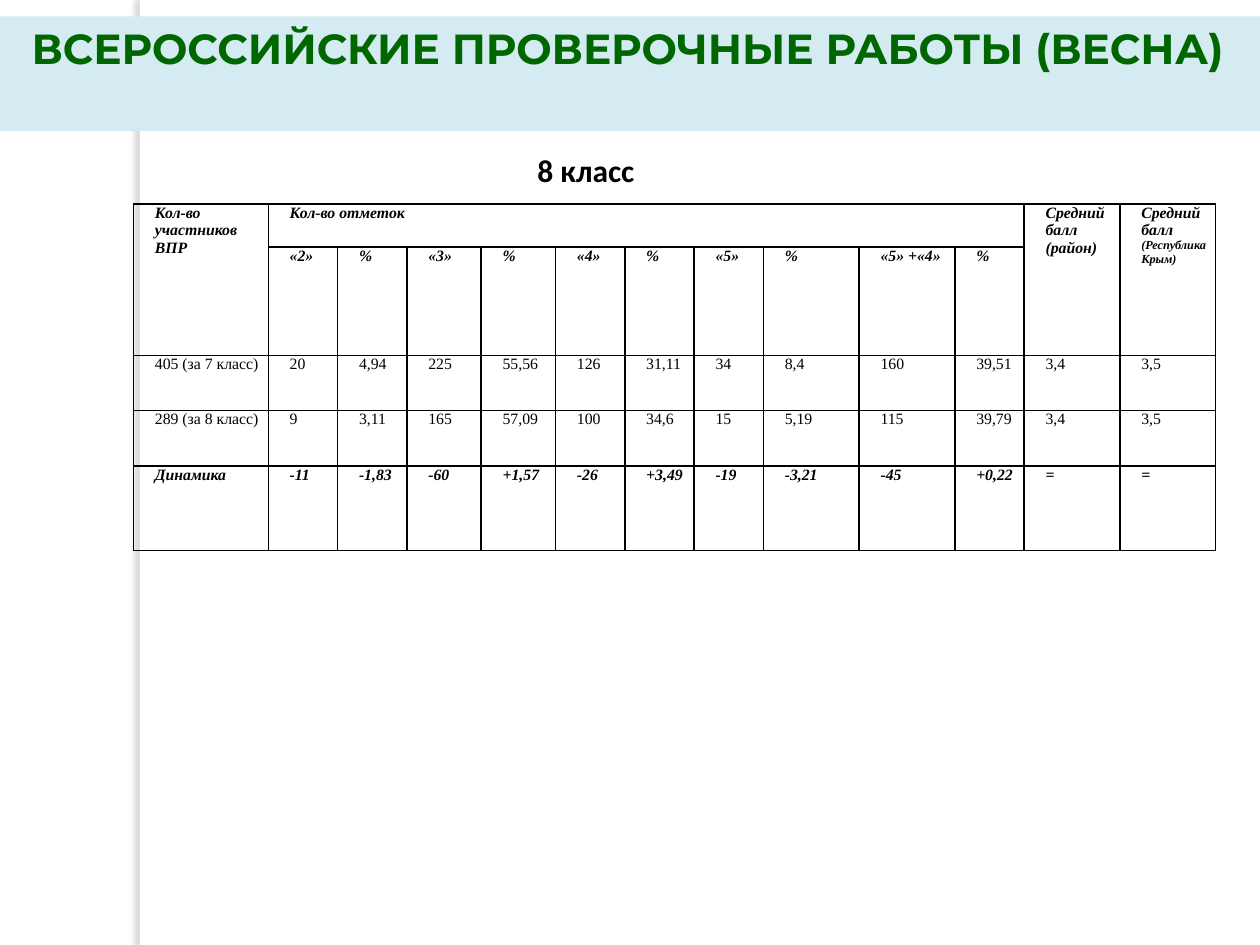
import pptx
import pptx.dml.color
import pptx.enum.shapes
import pptx.enum.text
import pptx.oxml
import pptx.util
from pptx.util import Inches

COLORS = {
    "background": "FFFFFF",
    "band": "D4EBF1",
    "title": "006600",
    "text": "000000",
    "border": "000000",
    "shadow": "736F63",
}
ALIGN = pptx.enum.text.PP_ALIGN
NS = 'xmlns:a="http://schemas.openxmlformats.org/drawingml/2006/main"'

COLUMN_WIDTHS = [1.07, 0.55, 0.55, 0.59, 0.59, 0.55, 0.55, 0.55,
                 0.76, 0.76, 0.55, 0.76, 0.76]
ROW_HEIGHTS = [0.34, 0.86, 0.44, 0.44, 0.67]
MARKS = ["«2»", "%", "«3»", "%", "«4»", "%", "«5»", "%", "«5» +«4»", "%"]
RESULTS = [
    ["405 (за 7 класс)", "20", "4,94", "225", "55,56", "126", "31,11",
     "34", "8,4", "160", "39,51", "3,4", "3,5"],
    ["289 (за 8 класс)", "9", "3,11", "165", "57,09", "100", "34,6",
     "15", "5,19", "115", "39,79", "3,4", "3,5"],
    ["Динамика", "-11", "-1,83", "-60", "+1,57", "-26", "+3,49",
     "-19", "-3,21", "-45", "+0,22", "=", "="],
]


def rgb(name):
    return pptx.dml.color.RGBColor.from_string(COLORS[name])


def write(paragraph, text, size=9, font="Times New Roman", color="text",
          bold=False, italic=False, align=ALIGN.JUSTIFY):
    """Append one formatted run to a paragraph."""
    paragraph.alignment = align
    run = paragraph.add_run()
    run.text = text
    run.font.size = pptx.util.Pt(size)
    run.font.name = font
    run.font.bold = bold
    run.font.italic = italic
    run.font.color.rgb = rgb(color)


def add_rectangle(slide, left, top, width, height, fill):
    rectangle = slide.shapes.add_shape(
        pptx.enum.shapes.MSO_SHAPE.RECTANGLE,
        Inches(left), Inches(top), Inches(width), Inches(height))
    rectangle.shadow.inherit = False
    rectangle.fill.solid()
    rectangle.fill.fore_color.rgb = rgb(fill)
    rectangle.line.fill.background()
    return rectangle


def add_side_strip(slide, left, top, width, height):
    strip = add_rectangle(slide, left, top, width, height, "background")
    # Soft shadow cast to the left
    effects = strip._element.spPr.find(pptx.oxml.ns.qn("a:effectLst"))
    effects.append(pptx.oxml.parse_xml(
        f'<a:outerShdw {NS} blurRad="{pptx.util.Pt(3)}" dist="{pptx.util.Pt(3)}" '
        f'dir="10800000" algn="ctr" rotWithShape="0">'
        f'<a:srgbClr val="{COLORS["shadow"]}"><a:alpha val="25000"/></a:srgbClr>'
        f'</a:outerShdw>'))


def add_title_band(slide, left, top, width, height):
    band = add_rectangle(slide, left, top, width, height, "band")
    band.text_frame.word_wrap = True
    band.text_frame.vertical_anchor = pptx.enum.text.MSO_ANCHOR.TOP
    write(band.text_frame.paragraphs[0],
          "ВСЕРОССИЙСКИЕ ПРОВЕРОЧНЫЕ РАБОТЫ (ВЕСНА)", size=24,
          font="Montserrat", color="title", bold=True, align=ALIGN.CENTER)


def add_class_heading(slide, left, top, width, height):
    heading = slide.shapes.add_textbox(
        Inches(left), Inches(top), Inches(width), Inches(height))
    heading.text_frame.word_wrap = True
    write(heading.text_frame.paragraphs[0], "8 класс", size=18,
          font="Calibri", bold=True, align=ALIGN.CENTER)


def format_cell(cell):
    cell.fill.background()
    cell.margin_left = cell.margin_right = Inches(0.07)
    cell.margin_top = cell.margin_bottom = 0
    properties = cell._tc.get_or_add_tcPr()
    for position, side in enumerate(("lnL", "lnR", "lnT", "lnB")):
        properties.insert(position, pptx.oxml.parse_xml(
            f'<a:{side} {NS} w="{pptx.util.Pt(1)}"><a:solidFill>'
            f'<a:srgbClr val="{COLORS["border"]}"/></a:solidFill></a:{side}>'))


def fill_cell(cell, *lines, **style):
    """Write each line as an indented paragraph."""
    for number, line in enumerate(lines):
        frame = cell.text_frame
        paragraph = frame.add_paragraph() if number else frame.paragraphs[0]
        write(paragraph, line, **style)
        paragraph._p.get_or_add_pPr().set("marL", str(Inches(0.1)))
        paragraph._p.get_or_add_pPr().set("indent", "0")


def add_results_table(slide, left, top, width, height):
    table = slide.shapes.add_table(
        len(ROW_HEIGHTS), len(COLUMN_WIDTHS),
        Inches(left), Inches(top), Inches(width), Inches(height)).table
    table.first_row = table.horz_banding = False
    for column, share in zip(table.columns, COLUMN_WIDTHS):
        column.width = Inches(share)
    for row, share in zip(table.rows, ROW_HEIGHTS):
        row.height = Inches(share)
    for cell in table.iter_cells():
        format_cell(cell)

    # Two-level header
    table.cell(0, 1).merge(table.cell(0, 10))
    for column in (0, 11, 12):
        table.cell(0, column).merge(table.cell(1, column))
    header = {"bold": True, "italic": True}
    fill_cell(table.cell(0, 0), "Кол-во участников ВПР", **header)
    fill_cell(table.cell(0, 1), "Кол-во отметок", **header)
    fill_cell(table.cell(0, 11), "Средний балл", "(район)", **header)
    fill_cell(table.cell(0, 12), "Средний балл ", **header)
    write(table.cell(0, 12).text_frame.paragraphs[0], "(Республика Крым)",
          size=7, **header)
    for column, mark in enumerate(MARKS, start=1):
        fill_cell(table.cell(1, column), mark, **header)

    # Results, with the change in the last row
    for row, values in enumerate(RESULTS, start=2):
        emphasis = row == len(ROW_HEIGHTS) - 1
        for column, value in enumerate(values):
            fill_cell(table.cell(row, column), value,
                      bold=emphasis, italic=emphasis)


def main():
    presentation = pptx.Presentation()
    presentation.slide_width = Inches(10)
    presentation.slide_height = Inches(7.5)
    slide = presentation.slides.add_slide(presentation.slide_layouts[6])
    slide.background.fill.solid()
    slide.background.fill.fore_color.rgb = rgb("background")

    add_side_strip(slide, 1.11, 0, 0.08, 7.5)
    add_title_band(slide, -0.04, 0.13, 10.04, 0.91)
    add_class_heading(slide, 3.27, 1.15, 2.76, 0.4)
    add_results_table(slide, 1.06, 1.62, sum(COLUMN_WIDTHS), sum(ROW_HEIGHTS))
    presentation.save("out.pptx")


if __name__ == "__main__":
    main()
